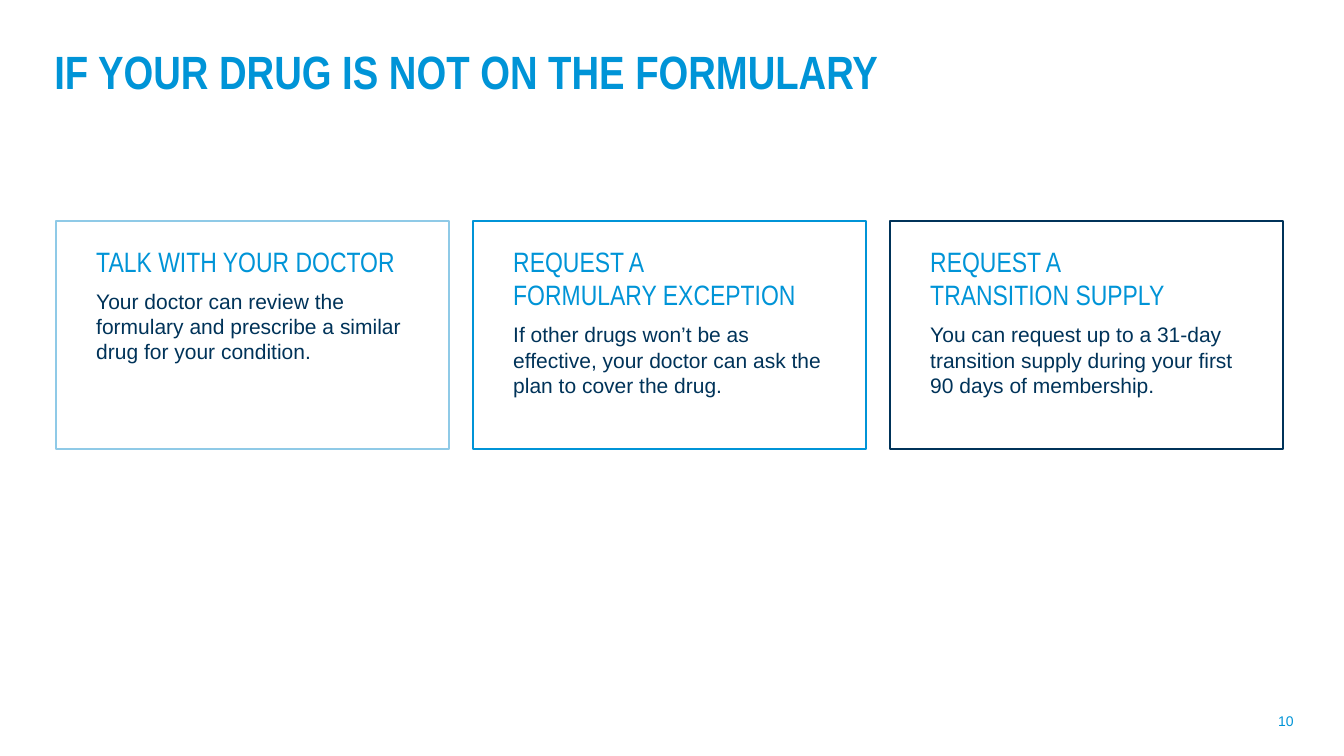
from pptx import Presentation
from pptx.dml.color import RGBColor
from pptx.enum.shapes import MSO_SHAPE
from pptx.enum.text import MSO_ANCHOR, PP_ALIGN
from pptx.util import Pt

EMU_PER_PX = 914400 / 84
RECTANGLE = MSO_SHAPE.RECTANGLE
TOP, MIDDLE = MSO_ANCHOR.TOP, MSO_ANCHOR.MIDDLE
RIGHT = PP_ALIGN.RIGHT

BLUE = RGBColor(0x00, 0x94, 0xD7)
LIGHT_BLUE = RGBColor(0x8F, 0xCA, 0xE7)
NAVY = RGBColor(0x00, 0x33, 0x59)
HEADING_FONT = "Arial Narrow"
BODY_FONT = "Arial"

CARDS = [
    (LIGHT_BLUE, ["TALK WITH YOUR DOCTOR"],
     "Your doctor can review the formulary and prescribe a similar drug for your condition."),
    (BLUE, ["REQUEST A", "FORMULARY EXCEPTION"],
     "If other drugs won’t be as effective, your doctor can ask the plan to cover the drug."),
    (NAVY, ["REQUEST A", "TRANSITION SUPPLY"],
     "You can request up to a 31-day transition supply during your first 90 days of membership."),
]


def px(length):
    return round(length * EMU_PER_PX)


def add_text_frame(slide, left, top, width, height, anchor=TOP):
    box = slide.shapes.add_textbox(px(left), px(top), px(width), px(height))
    frame = box.text_frame
    frame.word_wrap = True
    frame.vertical_anchor = anchor
    return frame


def add_run(paragraph, text, font_name, size, color, bold=False):
    run = paragraph.add_run()
    run.text = text
    run.font.name = font_name
    run.font.size = Pt(size)
    run.font.color.rgb = color
    run.font.bold = bold


def add_title(slide, left, top, width, height):
    paragraph = add_text_frame(slide, left, top, width, height).paragraphs[0]
    paragraph.line_spacing = 0.9
    add_run(paragraph, "IF YOUR DRUG IS NOT ON THE FORMULARY", HEADING_FONT, 40, BLUE, True)


def add_card(slide, left, top, width, height, color, heading_lines, body):
    outline = slide.shapes.add_shape(RECTANGLE, px(left), px(top), px(width), px(height))
    outline.shadow.inherit = False
    outline.fill.background()
    outline.line.color.rgb = color
    outline.line.width = Pt(2)

    frame = add_text_frame(slide, left + 32, top + 19, width - 55, height - 66)
    heading = frame.paragraphs[0]
    for index, line in enumerate(heading_lines):
        if index:
            heading.add_line_break()
        add_run(heading, line, HEADING_FONT, 24, BLUE)
    paragraph = frame.add_paragraph()
    paragraph.space_before = Pt(9)
    add_run(paragraph, body, BODY_FONT, 18, NAVY)


def add_card_row(slide, left, top, width, height, gap):
    card_width = (width - gap * (len(CARDS) - 1)) // len(CARDS)
    for index, card in enumerate(CARDS):
        add_card(slide, left + index * (card_width + gap), top, card_width, height, *card)


def add_page_number(slide, left, top, width, height):
    paragraph = add_text_frame(slide, left, top, width, height, MIDDLE).paragraphs[0]
    paragraph.alignment = RIGHT
    add_run(paragraph, "10", BODY_FONT, 12, BLUE)


def main():
    presentation = Presentation()
    presentation.slide_width = px(1344)
    presentation.slide_height = px(756)
    slide = presentation.slides.add_slide(presentation.slide_layouts[6])
    add_page_number(slide, 1255, 701, 47, 40)
    add_title(slide, 46, 45, 1199, 103)
    add_card_row(slide, 56, 221, 1227, 228, 24)
    presentation.save("out.pptx")


if __name__ == "__main__":
    main()
